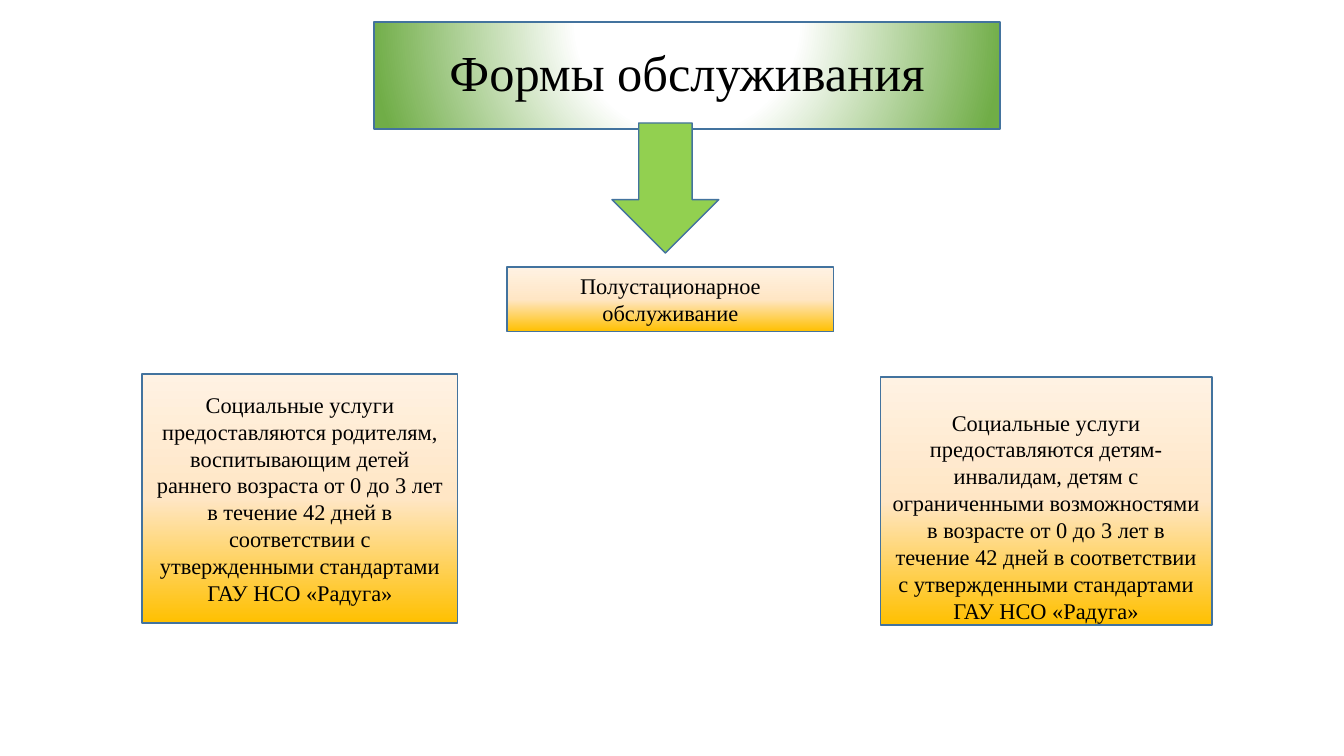
from dataclasses import dataclass

from pptx import Presentation
from pptx.dml.color import RGBColor
from pptx.enum.shapes import MSO_SHAPE
from pptx.enum.text import MSO_ANCHOR, PP_ALIGN
from pptx.oxml import parse_xml
from pptx.oxml.ns import nsdecls, qn
from pptx.shapes.autoshape import Shape
from pptx.slide import Slide
from pptx.util import Inches, Pt

COLORS = {
    "outline": "43739E",
    "text": "000000",
    "arrow": "92D050",
    "white": "FFFFFF",
    "green": "70AD47",
    "amber": "FFC000",
    "peach": "FFE6C5",
    "cream": "FFF2E3",
}


@dataclass(frozen=True)
class Gradient:
    stops: tuple[tuple[int, str], ...]
    direction: str


@dataclass(frozen=True)
class Box:
    left: float
    top: float
    width: float
    height: float
    text: str
    gradient: Gradient
    size: int = 16
    line_spacing: float = 1.0
    top_margin: float = 0.05


GREEN_GLOW = Gradient(
    ((0, "white"), (35, "white"), (100, "green")),
    '<a:path path="circle">'
    '<a:fillToRect l="50000" t="-80000" r="50000" b="180000"/></a:path>',
)
AMBER_FADE = Gradient(
    ((0, "amber"), (50, "peach"), (100, "cream")),
    '<a:lin ang="16200000" scaled="0"/>',
)

BOXES = [
    Box(3.71, 0.22, 6.21, 1.06, "Формы обслуживания", GREEN_GLOW,
        size=36, line_spacing=0.9),
    Box(1.41, 3.71, 3.13, 2.47,
        "Социальные услуги предоставляются родителям, воспитывающим детей "
        "раннего возраста от 0 до 3 лет в течение 42 дней в соответствии с "
        "утвержденными стандартами ГАУ НСО «Радуга»", AMBER_FADE),
    Box(8.73, 3.74, 3.29, 2.46,
        "Социальные услуги предоставляются детям-инвалидам, детям с "
        "ограниченными возможностями в возрасте от 0 до 3 лет в течение 42 дней "
        "в соответствии с утвержденными стандартами ГАУ НСО «Радуга»",
        AMBER_FADE, top_margin=0.35),
    Box(5.03, 2.65, 3.24, 0.64, "Полустационарное обслуживание", AMBER_FADE),
]


def add_outlined_shape(slide: Slide, kind: MSO_SHAPE, left: float, top: float,
                       width: float, height: float) -> Shape:
    shape = slide.shapes.add_shape(
        kind, Inches(left), Inches(top), Inches(width), Inches(height))
    shape.shadow.inherit = False
    shape.line.color.rgb = RGBColor.from_string(COLORS["outline"])
    shape.line.width = Pt(1)
    return shape


def apply_gradient(shape: Shape, gradient: Gradient) -> None:
    stops = "".join(
        f'<a:gs pos="{position * 1000}"><a:srgbClr val="{COLORS[color]}"/></a:gs>'
        for position, color in gradient.stops)
    shape.fill.gradient()
    properties = shape.element.spPr
    properties.replace(
        properties.find(qn("a:gradFill")),
        parse_xml(f'<a:gradFill {nsdecls("a")} rotWithShape="1">'
                  f"<a:gsLst>{stops}</a:gsLst>{gradient.direction}</a:gradFill>"))


def add_box(slide: Slide, box: Box) -> None:
    shape = add_outlined_shape(
        slide, MSO_SHAPE.RECTANGLE, box.left, box.top, box.width, box.height)
    apply_gradient(shape, box.gradient)
    frame = shape.text_frame
    frame.word_wrap = True
    frame.vertical_anchor = MSO_ANCHOR.MIDDLE
    frame.margin_top = Inches(box.top_margin)
    paragraph = frame.paragraphs[0]
    paragraph.text = box.text
    paragraph.alignment = PP_ALIGN.CENTER
    paragraph.line_spacing = box.line_spacing
    paragraph.font.name = "Times New Roman"
    paragraph.font.size = Pt(box.size)
    paragraph.font.color.rgb = RGBColor.from_string(COLORS["text"])


def add_arrow(slide: Slide) -> None:
    arrow = add_outlined_shape(slide, MSO_SHAPE.DOWN_ARROW, 6.07, 1.22, 1.06, 1.29)
    arrow.fill.solid()
    arrow.fill.fore_color.rgb = RGBColor.from_string(COLORS["arrow"])


def main() -> None:
    """Build the slide on forms of service and save it."""
    presentation = Presentation()
    presentation.slide_width = Inches(13.33)
    presentation.slide_height = Inches(7.5)
    slide = presentation.slides.add_slide(presentation.slide_layouts[6])
    for box in BOXES:
        add_box(slide, box)
    add_arrow(slide)
    presentation.save("out.pptx")


if __name__ == "__main__":
    main()
